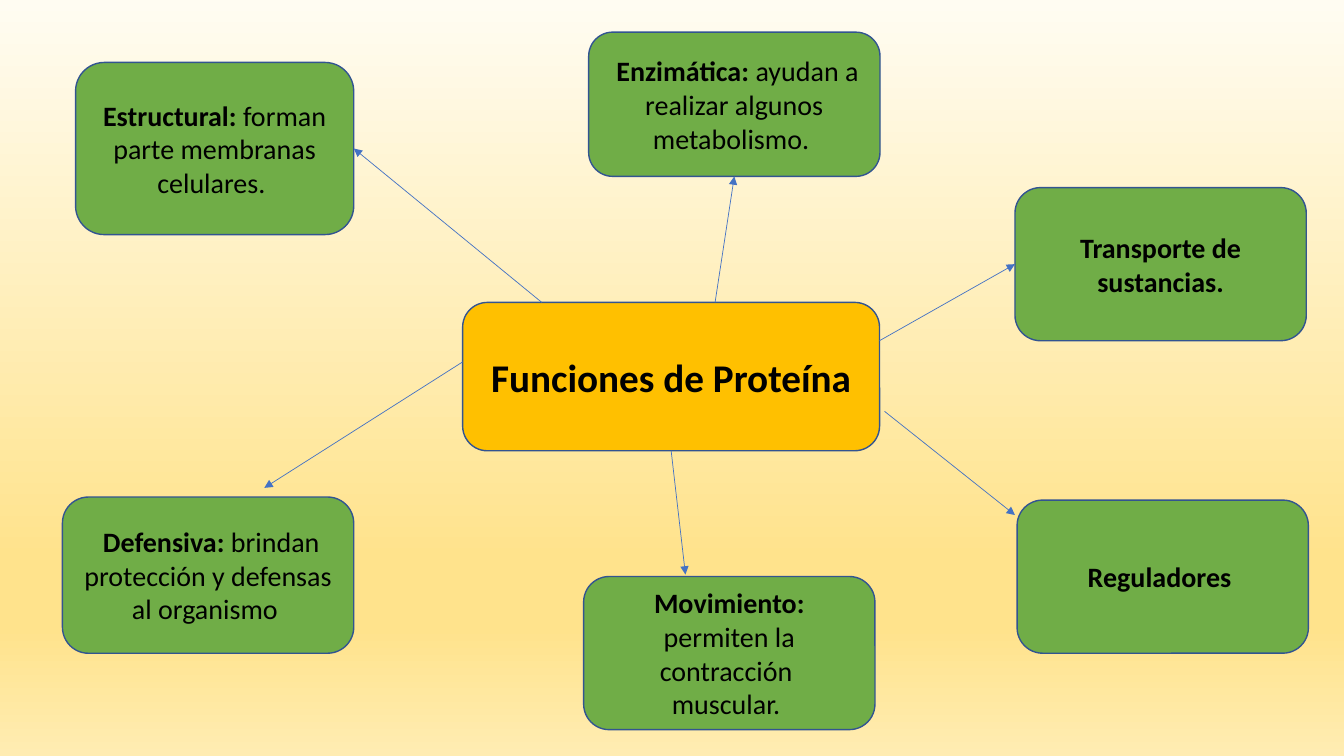
from copy import deepcopy
from dataclasses import dataclass
from typing import Optional

from pptx import Presentation
from pptx.dml.color import RGBColor
from pptx.enum.shapes import MSO_CONNECTOR, MSO_SHAPE
from pptx.enum.text import MSO_ANCHOR, PP_ALIGN
from pptx.oxml.ns import qn
from pptx.oxml.xmlchemy import OxmlElement
from pptx.util import Pt

ROUNDED = MSO_SHAPE.ROUNDED_RECTANGLE
STRAIGHT = MSO_CONNECTOR.STRAIGHT
MIDDLE = MSO_ANCHOR.MIDDLE
CENTER = PP_ALIGN.CENTER
BOTTOM, LEFT, RIGHT = 2, 1, 3

FONT = "Calibri"
COLORS = {
    "topic": "FFC000",
    "function": "70AD47",
    "outline": "325491",
    "arrow": "4472C4",
    "text": "000000",
}
BACKGROUND_STOPS = [(0, "FFFCF2"), (0.74, "FFE38C"), (0.83, "FFE38C"), (1, "FFECB2")]
FUNCTION_WIDTH = 208.1


@dataclass
class Box:
    left: float
    top: float
    height: float
    heading: str
    details: tuple[str, ...] = ()
    width: float = FUNCTION_WIDTH
    fill: str = "function"
    size: float = 20


@dataclass
class Arrow:
    """An arrow from the topic to a function, with the sides it is joined to."""
    start: tuple[float, float]
    end: tuple[float, float]
    target: str
    start_side: Optional[int] = None
    end_side: Optional[int] = None


TOPIC = Box(330.5, 216, 106, "Funciones de Proteína", width=297.8, fill="topic", size=28)
FUNCTIONS = {
    "structural": Box(54, 44.6, 123, "Estructural: ",
                      ("forman parte membranas celulares. ",), width=198.7),
    "defensive": Box(44.6, 355, 111.6, " Defensiva: ",
                     ("brindan protección y defensas al organismo ",)),
    "enzymatic": Box(420.5, 23, 103, " Enzimática: ",
                     ("ayudan a realizar algunos metabolismo. ",)),
    "movement": Box(416.9, 411.8, 109.4, "Movimiento: ",
                    ("permiten la contracción ", "muscular. ")),
    "transport": Box(725, 134, 109.4, "Transporte de sustancias."),
    "regulators": Box(726.5, 357.2, 109.4, "Reguladores "),
}
ARROWS = [
    Arrow((510.8, 216), (524.5, 126), "enzymatic", end_side=BOTTOM),
    Arrow((387, 216), (252.7, 106.1), "structural", end_side=RIGHT),
    Arrow((628.2, 243.4), (725, 188.7), "transport", end_side=LEFT),
    Arrow((631.8, 293.8), (725, 367.9), "regulators"),
    Arrow((479.4, 322), (489.6, 410.4), "movement", start_side=BOTTOM),
    Arrow((330.5, 258.5), (188.8, 348.5), "defensive"),
]


def rgb(name: str) -> RGBColor:
    return RGBColor.from_string(COLORS[name])


def paint_background(slide) -> None:
    fill = slide.background.fill
    fill.gradient()
    fill.gradient_angle = 270
    stop_list = slide.element.find(".//" + qn("a:gsLst"))
    for _ in range(len(BACKGROUND_STOPS) - len(stop_list)):
        stop_list.append(deepcopy(stop_list[0]))
    for stop, (position, color) in zip(fill.gradient_stops, BACKGROUND_STOPS):
        stop.position = position
        stop.color.rgb = RGBColor.from_string(color)


def add_text(paragraph, text: str, *, size: float, bold: bool = False) -> None:
    paragraph.alignment = CENTER
    run = paragraph.add_run()
    run.text = text
    run.font.name = FONT
    run.font.size = Pt(size)
    run.font.bold = bold
    run.font.color.rgb = rgb("text")


def draw_box(slide, box: Box):
    shape = slide.shapes.add_shape(
        ROUNDED, Pt(box.left), Pt(box.top), Pt(box.width), Pt(box.height))
    shape.shadow.inherit = False
    shape.fill.solid()
    shape.fill.fore_color.rgb = rgb(box.fill)
    shape.line.color.rgb = rgb("outline")
    shape.line.width = Pt(1)
    frame = shape.text_frame
    frame.word_wrap = True
    frame.vertical_anchor = MIDDLE
    paragraph = frame.paragraphs[0]
    add_text(paragraph, box.heading, size=box.size, bold=True)
    for index, detail in enumerate(box.details):
        if index:
            paragraph = frame.add_paragraph()
        add_text(paragraph, detail, size=box.size)
    return shape


def draw_arrow(slide, arrow: Arrow, topic, function) -> None:
    connector = slide.shapes.add_connector(
        STRAIGHT, *(Pt(value) for value in arrow.start + arrow.end))
    if arrow.start_side is not None:
        connector.begin_connect(topic, arrow.start_side)
    if arrow.end_side is not None:
        connector.end_connect(function, arrow.end_side)
    connector.line.color.rgb = rgb("arrow")
    connector.line.width = Pt(0.5)
    head = OxmlElement("a:tailEnd")
    head.set("type", "triangle")
    connector.line._get_or_add_ln().append(head)
    connector._element.spPr.append(OxmlElement("a:effectLst"))


def main() -> None:
    presentation = Presentation()
    presentation.slide_width = Pt(960)
    presentation.slide_height = Pt(540)
    slide = presentation.slides.add_slide(presentation.slide_layouts[6])
    paint_background(slide)
    topic = draw_box(slide, TOPIC)
    functions = {key: draw_box(slide, box) for key, box in FUNCTIONS.items()}
    for arrow in ARROWS:
        draw_arrow(slide, arrow, topic, functions[arrow.target])
    presentation.save("out.pptx")


if __name__ == "__main__":
    main()
